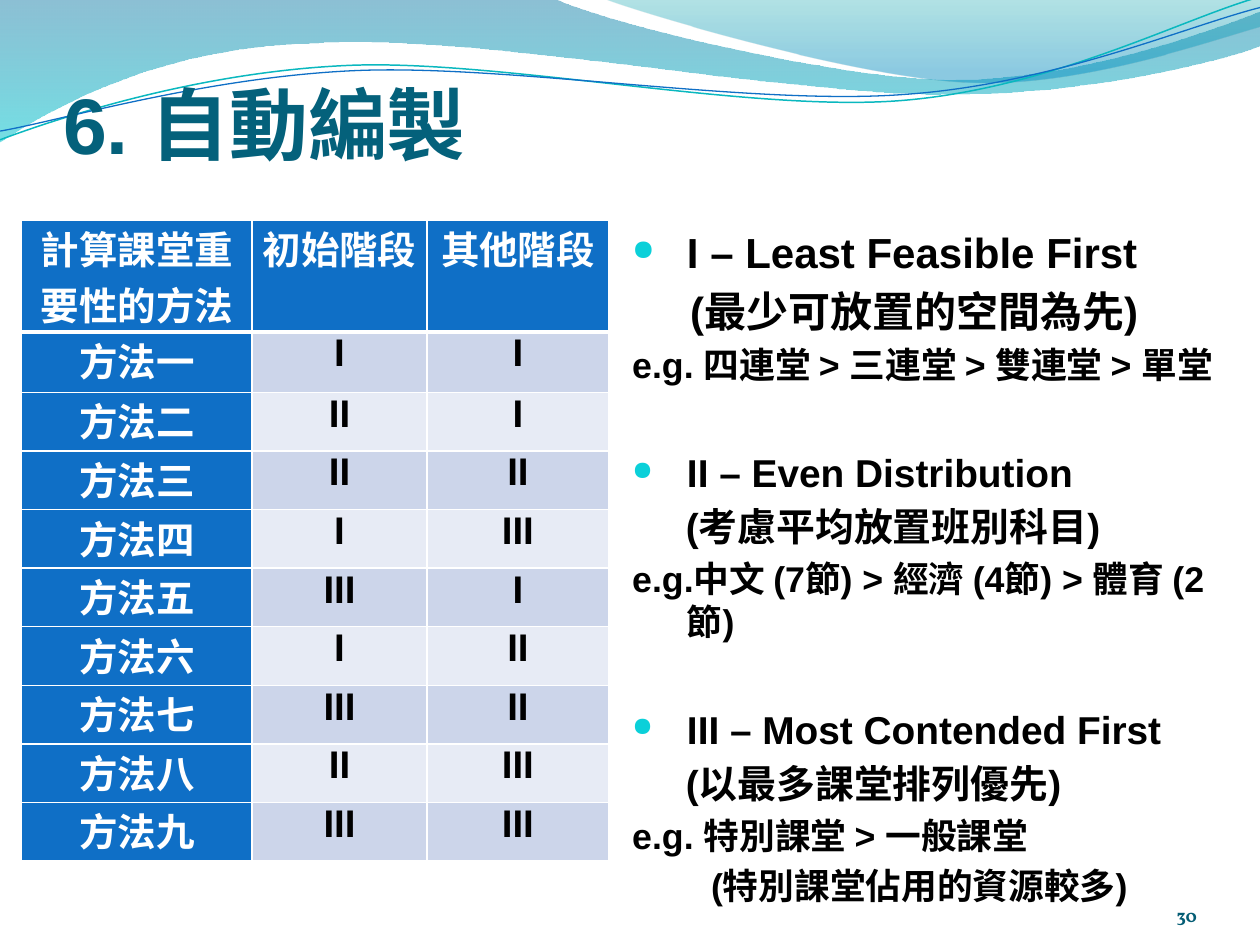
from lxml import etree
from pptx import Presentation
from pptx import util as u
from pptx.dml.color import RGBColor
from pptx.enum import text
from pptx.oxml import ns

Pt = u.Pt
INK = {"title": "04617B", "head": "0F6FC6", "odd": "CCD5EA", "even": "E7EBF5",
       "white": "FFFFFF", "black": "000000", "dot": "0BD0D9", "num": "045D75"}


def style(para, size, ink, face="Arial"):
    for run in para.runs:
        font = run.font
        font.size, font.bold, font.name = Pt(size), True, face
        font.color.rgb = RGBColor.from_string(ink)


def trace(parts, closed):
    """Draw a path in points; six-number parts are Bezier curves, pairs are corners."""
    nums = [Pt(n) for part in parts for n in part]
    pts = list(zip(nums[::2], nums[1::2]))
    pen = slide.shapes.build_freeform(*pts[0], scale=1.0)
    pen.add_line_segments(pts[1:], close=closed)
    shape = pen.convert_to_shape()
    shape.shadow.inherit = False
    steps = shape._element.iter(ns.qn("a:lnTo"))
    steps = iter(list(steps))
    for part in parts[1:]:
        step = next(steps)
        if len(part) == 6:
            step.tag = ns.qn("a:cubicBezTo")
            for _ in range(2):
                spare = next(steps)
                step.append(spare[0])
                spare.getparent().remove(spare)
    return shape


prs = Presentation()
prs.slide_width, prs.slide_height = Pt(720), Pt(540)
slide = prs.slides.add_slide(prs.slide_layouts[5])

# Waves across the top: path, then gradient stops of place, colour, opacity
bands = [
    ([(0, 0), (316.8, -0.7), (342.7, 12.2, 478.1, 45.4, 545.8, 45.4),
      (614.2, 45.4, 689.8, 18.7, 720, 6.5), (720.7, 25.9),
      (707.8, 31.7, 626.4, 54.7, 537.1, 54), (447.8, 54, 275, 20.2, 185, 24.5),
      (92.9, 25.9, 33.1, 59.8, -0.7, 81.4)],
     [(0, "0074A1", 45), (1, "00C6CF", 55)]),
    ([(344.9, -0.7), (366.5, 7.9, 491, 44.6, 553.7, 46.8),
      (616.3, 49.7, 691.9, 23, 720, 15.1), (720, 0)],
     [(0, "00A1A9", 30), (0.8, "008BBF", 45)]),
]
for path, stops in bands:
    band = trace(path, True)
    band.line.fill.background()
    band.fill.gradient()
    band.fill.gradient_angle = 270
    for stop, (place, ink, alpha) in zip(band.fill.gradient_stops, stops):
        stop.position = place
        stop.color.rgb = RGBColor.from_string(ink)
    tints = band.fill._xPr.iter(ns.qn("a:srgbClr"))
    for tint, (place, ink, alpha) in zip(tints, stops):
        etree.SubElement(tint, ns.qn("a:alpha")).set("val", str(alpha * 1000))

curves = [
    ([(0, 79.9), (34.6, 67, 113.8, 41, 199.4, 37.4),
      (284.4, 33.8, 427, 64.1, 513.4, 57.6), (599.8, 51.1, 675.4, 10.8, 718.6, -1.4)],
     "0AB8BF", 0.85),
    ([(0, 74.9), (33.8, 69.1, 118.1, 43.9, 203.8, 40.3),
      (290.2, 36.7, 429.8, 60.5, 516.2, 54), (601.9, 48.2, 677.5, 15.1, 720, 4.3)],
     "0F6FC6", 0.75),
]
for path, ink, width in curves:
    curve = trace(path, False)
    curve.fill.background()
    curve.line.color.rgb = RGBColor.from_string(ink)
    curve.line.width = Pt(width)

# Title, in front of the waves
title = slide.shapes.title
slide.shapes._spTree.append(title._element)
title.left, title.top, title.width, title.height = Pt(36), Pt(29.5), Pt(256), Pt(67.7)
frame = title.text_frame
frame.text = "6. 自動編製"
frame.margin_left = frame.margin_right = frame.margin_bottom = 0
frame.vertical_anchor = text.MSO_ANCHOR.BOTTOM
frame.auto_size = text.MSO_AUTO_SIZE.NONE
frame.word_wrap = False
frame.paragraphs[0].alignment = text.PP_ALIGN.LEFT
style(frame.paragraphs[0], 45, INK["title"])

# Table of methods
rows = [("計算課堂重要性的方法", "初始階段", "其他階段"),
        ("方法一", "I", "I"), ("方法二", "II", "I"), ("方法三", "II", "II"),
        ("方法四", "I", "III"), ("方法五", "III", "I"), ("方法六", "I", "II"),
        ("方法七", "III", "II"), ("方法八", "II", "III"), ("方法九", "III", "III")]
grid = slide.shapes.add_table(len(rows), 3, Pt(12.4), Pt(126), Pt(335.5), Pt(365.6)).table
grid.first_col = True
for col, width in zip(grid.columns, (131.6, 100.1, 103.8)):
    col.width = Pt(width)
for r, row in enumerate(rows):
    grid.rows[r].height = Pt({0: 63, 1: 34.6}.get(r, 33.5))
    for c, word in enumerate(row):
        cell = grid.cell(r, c)
        head = r == 0 or c == 0
        cell.margin_left = cell.margin_right = Pt(4.3)
        cell.margin_top = cell.margin_bottom = 0
        prop = cell._tc.get_or_add_tcPr()
        for side in "LRTB":
            thick = (r == 0 and side == "B") or (r == 1 and side == "T")
            edge = etree.SubElement(prop, ns.qn("a:ln" + side), w=str(Pt(3 if thick else 1)))
            paint = etree.SubElement(edge, ns.qn("a:solidFill"))
            etree.SubElement(paint, ns.qn("a:srgbClr")).set("val", INK["white"])
        cell.fill.solid()
        fill = INK["head"] if head else INK["odd" if r % 2 else "even"]
        cell.fill.fore_color.rgb = RGBColor.from_string(fill)
        cell.text_frame.text = word
        para = cell.text_frame.paragraphs[0]
        para.alignment = text.PP_ALIGN.CENTER
        para.space_before = Pt(2)
        style(para, 22, INK["white" if head else "black"])

# Rules: words, size, left margin, first-line indent, space before
notes = [("I – Least Feasible First", 24, 31.3, -31.3, 4.8),
         ("(最少可放置的空間為先)", 24, 33.1, 0, 4.8),
         ("e.g. 四連堂 > 三連堂 > 雙連堂 > 單堂", 20.4, 31.3, -31.3, 4.1),
         ("II – Even Distribution", 22.2, 31.3, -31.3, 35.9),
         ("(考慮平均放置班別科目)", 22.2, 30.6, 0, 4.4),
         ("e.g.中文 (7節) > 經濟 (4節) > 體育 (2節)", 20.4, 31.3, -31.3, 4.1),
         ("III – Most Contended First", 22.2, 31.3, -31.3, 35.9),
         ("(以最多課堂排列優先)", 22.2, 30.6, 0, 4.4),
         ("e.g. 特別課堂 > 一般課堂", 20.4, 31.3, -31.3, 4.1),
         ("(特別課堂佔用的資源較多)", 20.4, 45, 0, 4.1)]
frame = slide.shapes.add_textbox(Pt(354.2), Pt(126), Pt(365.8), Pt(390)).text_frame
frame.word_wrap = True
frame.text = "\n".join(note[0] for note in notes)
for para, (words, size, left, first, gap) in zip(frame.paragraphs, notes):
    para.space_before = Pt(gap)
    style(para, size, INK["black"])
    prop = para._p.get_or_add_pPr()
    prop.set("marL", str(Pt(left)))
    prop.set("indent", str(Pt(first)))
    if words.startswith("I"):
        tint = etree.SubElement(prop, ns.qn("a:buClr"))
        etree.SubElement(tint, ns.qn("a:srgbClr")).set("val", INK["dot"])
        etree.SubElement(prop, ns.qn("a:buSzPct")).set("val", "68000")
        etree.SubElement(prop, ns.qn("a:buChar")).set("char", "●")

# Page number
frame = slide.shapes.add_textbox(Pt(624.2), Pt(500.4), Pt(59.8), Pt(28.8)).text_frame
frame.word_wrap = True
frame.margin_left = frame.margin_right = frame.margin_top = frame.margin_bottom = 0
frame.vertical_anchor = text.MSO_ANCHOR.BOTTOM
frame.text = "30"
frame.paragraphs[0].alignment = text.PP_ALIGN.RIGHT
style(frame.paragraphs[0], 10.5, INK["num"], "Vollkorn")

prs.save("out.pptx")
